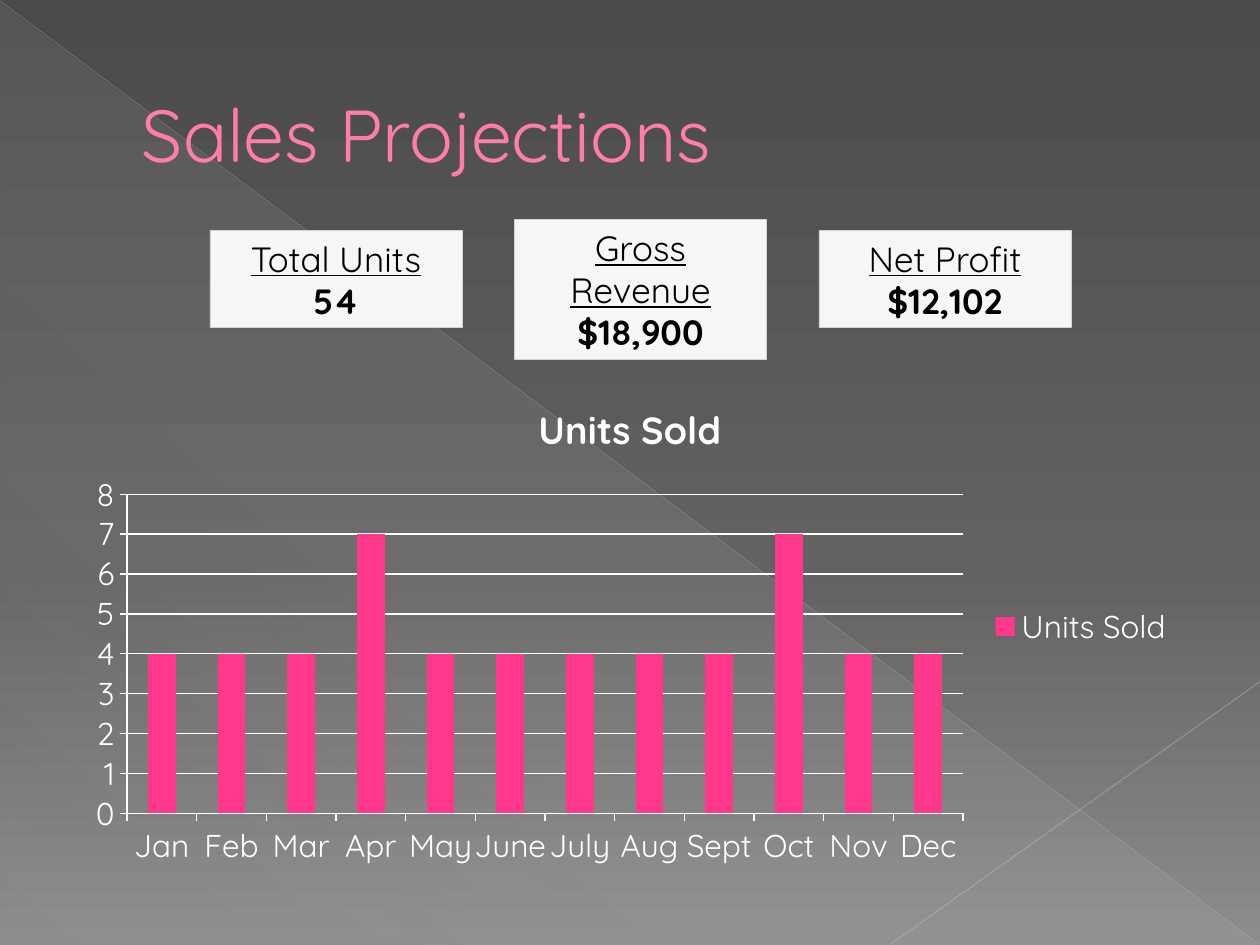
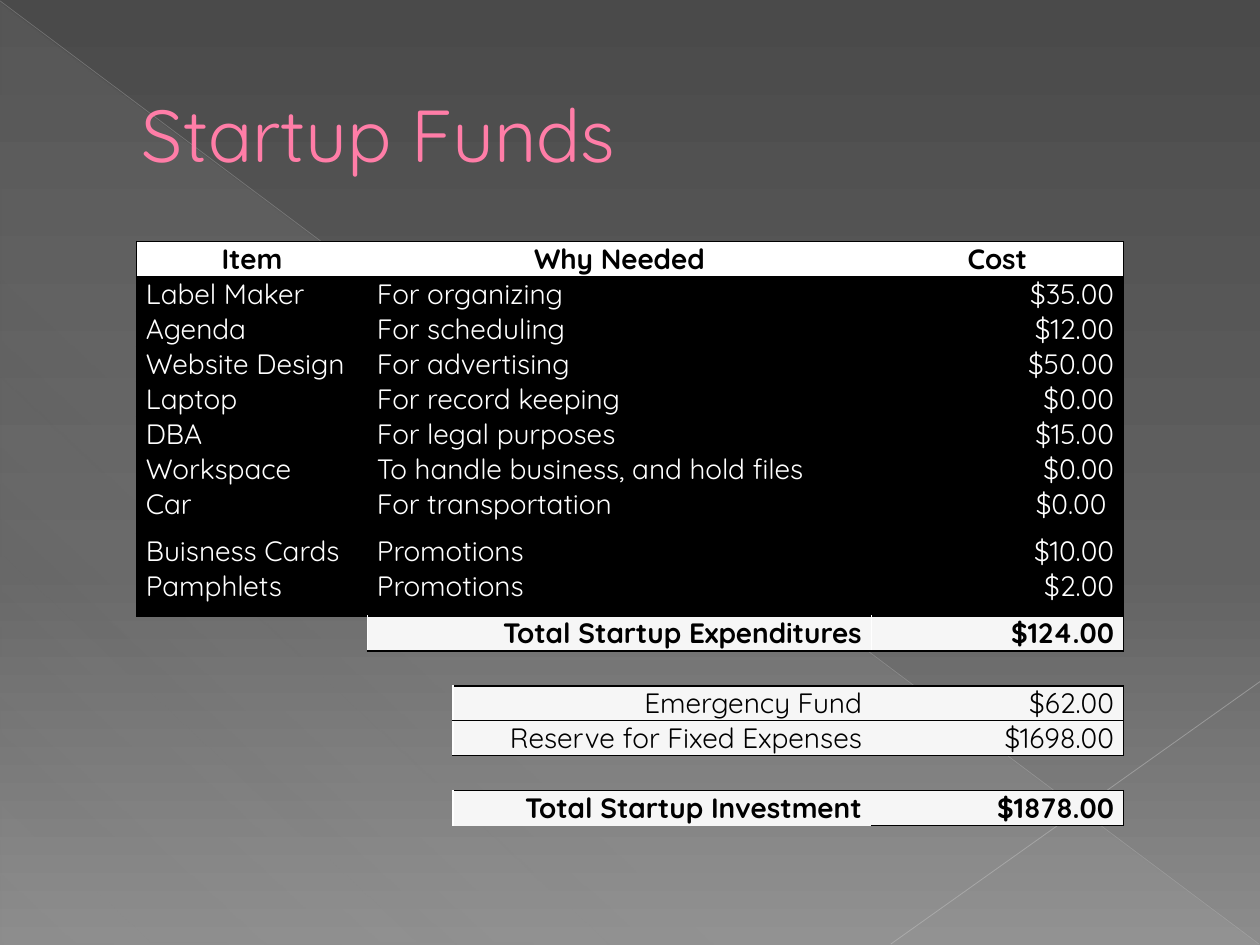
from lxml import etree
from pptx import Presentation
from pptx.chart.data import CategoryChartData
from pptx.dml.color import RGBColor
from pptx.enum.chart import XL_CHART_TYPE as ChartType, XL_LEGEND_POSITION as LegendPosition
from pptx.enum.chart import XL_TICK_MARK as TickMark
from pptx.enum.shapes import MSO_CONNECTOR as Connector, MSO_SHAPE as Shape
from pptx.enum.text import MSO_ANCHOR as Anchor, MSO_AUTO_SIZE as AutoSize, PP_ALIGN as Align
from pptx.oxml.ns import qn
from pptx.util import Pt

FONT = "Quicksand"
BLACK, WHITE, PALE, GREY = "000000", "FFFFFF", "F6F6F6", "D2D2D2"
PINK, TITLE_PINK, TITLE_EDGE = "FF388C", "FF7DA7", "B12761"
BACKDROP = [(0, "4A4A4A", 100), (60, "626262", 100), (100, "8C8C8C", 100)]
SHEEN = [(0, GREY, 10), (70, GREY, 8), (100, GREY, 1)]
NO_STYLE = "{2D5ABB26-0587-4C30-8999-92F81FD0307C}"

MONTHS = ["Jan", "Feb", "Mar", "Apr", "May", "June",
          "July", "Aug", "Sept", "Oct", "Nov", "Dec"]
UNITS = [4, 4, 4, 7, 4, 4, 4, 4, 4, 7, 4, 4]
TOTALS = [("Total Units", "54", 6.5, 55.5),
          ("Gross Revenue", "$18,900", 0, 80),
          ("Net Profit", "$12,102", 6.5, 55.5)]
EXPENSES = [
    ("Label Maker", "For organizing", "$35.00"),
    ("Agenda", "For scheduling", "$12.00"),
    ("Website Design", "For advertising", "$50.00"),
    ("Laptop", "For record keeping", "$0.00"),
    ("DBA", "For legal purposes", "$15.00"),
    ("Workspace\nCar", "To handle business, and hold files\nFor transportation",
     "$0.00\n$0.00 "),
    ("Buisness Cards\nPamphlets", "Promotions\nPromotions", "$10.00\n$2.00"),
]
SUMMARY = [
    ("Total Startup Expenditures", "$124.00", 1, True),
    None,
    ("Emergency Fund", "$62.00", 2, False),
    ("Reserve for Fixed Expenses", "$1698.00", 2, False),
    None,
    ("Total Startup Investment", "$1878.00", 2, True),
]


def rgb(color):
    return RGBColor.from_string(color)


def add_color(parent, color, alpha=100):
    solid = etree.SubElement(parent, qn("a:srgbClr"), val=color)
    if alpha < 100:
        etree.SubElement(solid, qn("a:alpha"), val=str(alpha * 1000))


def set_gradient(holder, stops, angle):
    gradient = etree.Element(qn("a:gradFill"), rotWithShape="1")
    stop_list = etree.SubElement(gradient, qn("a:gsLst"))
    for position, color, alpha in stops:
        stop = etree.SubElement(stop_list, qn("a:gs"), pos=str(position * 1000))
        add_color(stop, color, alpha)
    etree.SubElement(gradient, qn("a:lin"), ang=str(angle * 60000), scaled="0")
    holder.replace(holder.find(qn("a:solidFill")), gradient)


def style_text(frame, size, color, bold=False, align=Align.LEFT):
    for paragraph in frame.paragraphs:
        paragraph.alignment = align
        for run in paragraph.runs:
            run.font.name, run.font.size, run.font.bold = FONT, Pt(size), bold
            run.font.color.rgb = rgb(color)


def add_ray(slide, start, end, color, width, alpha):
    ray = slide.shapes.add_connector(Connector.STRAIGHT, *map(Pt, start + end))
    ray.line.color.rgb = rgb(color)
    ray.line.width = Pt(width)
    solid = ray.element.find(".//" + qn("a:ln") + "//" + qn("a:srgbClr"))
    etree.SubElement(solid, qn("a:alpha"), val=str(alpha * 1000))
    etree.SubElement(ray.element.spPr, qn("a:effectLst"))


def add_backdrop(slide):
    slide.background.fill.solid()
    set_gradient(slide.element.find(".//" + qn("p:bgPr")), BACKDROP, 90)
    sheen = slide.shapes.add_shape(Shape.RIGHT_TRIANGLE, Pt(0.5), Pt(1.5), Pt(719), Pt(538.5))
    sheen.shadow.inherit = False
    sheen.line.fill.background()
    sheen.fill.solid()
    set_gradient(sheen.element.spPr, SHEEN, 133)
    add_ray(slide, (0, 0.5), (719.5, 539.5), "BFBFBF", 0.39, 35)
    add_ray(slide, (720, 389.5), (509, 539.5), "C6C6C6", 0.47, 45)


def add_title(slide, text, left, top, width, height):
    title = slide.shapes.add_textbox(Pt(left), Pt(top), Pt(width), Pt(height))
    frame = title.text_frame
    frame.word_wrap = True
    frame.vertical_anchor = Anchor.MIDDLE
    frame.text = text
    style_text(frame, 42, TITLE_PINK)
    paragraph = frame.paragraphs[0]
    paragraph.alignment = Align.LEFT
    properties = paragraph.runs[0].font._element
    paragraph._p.get_or_add_pPr().set("marL", str(Pt(38)))
    outline = etree.Element(qn("a:ln"), w=str(Pt(0.5)))
    add_color(etree.SubElement(outline, qn("a:solidFill")), TITLE_EDGE)
    properties.insert(0, outline)


def start_slide(deck, title):
    slide = deck.slides.add_slide(deck.slide_layouts[6])
    add_backdrop(slide)
    add_title(slide, title, 36, 21, 648, 110)
    return slide


def add_totals(slide, left, top, width, step):
    for index, (label, value, offset, height) in enumerate(TOTALS):
        card = slide.shapes.add_shape(Shape.RECTANGLE, Pt(left + index * step),
                                      Pt(top + offset), Pt(width), Pt(height))
        card.shadow.inherit = False
        card.fill.solid()
        card.fill.fore_color.rgb = rgb(PALE)
        card.line.color.rgb = rgb(GREY)
        card.line.width = Pt(0.25)
        frame = card.text_frame
        frame.word_wrap = True
        frame.auto_size = AutoSize.SHAPE_TO_FIT_TEXT
        frame.vertical_anchor = Anchor.MIDDLE
        frame.text = f"{label}\n{value}"
        style_text(frame, 20, BLACK, align=Align.CENTER)
        frame.paragraphs[0].runs[0].font.underline = True
        frame.paragraphs[1].runs[0].font.bold = True


def add_units_chart(slide, left, top, width, height):
    data = CategoryChartData()
    data.categories = MONTHS
    data.add_series("Units Sold", UNITS)
    chart = slide.shapes.add_chart(ChartType.COLUMN_CLUSTERED, Pt(left), Pt(top),
                                   Pt(width), Pt(height), data).chart
    chart.font.name, chart.font.size = FONT, Pt(18)
    chart.font.color.rgb = rgb(WHITE)
    chart.has_title = True
    chart.chart_title.text_frame.text = "Units Sold"
    style_text(chart.chart_title.text_frame, 21.6, WHITE, True, Align.CENTER)
    chart.chart_title.include_in_layout = False
    chart.has_legend = True
    chart.legend.position = LegendPosition.RIGHT
    chart.legend.include_in_layout = False

    months, units = chart.category_axis, chart.value_axis
    units.minimum_scale, units.maximum_scale, units.major_unit = 0, 8, 1
    units.has_major_gridlines = True
    for axis in (months, units):
        axis.major_tick_mark = TickMark.OUTSIDE
    for line in (months.format.line, units.format.line, units.major_gridlines.format.line):
        line.color.rgb = rgb(WHITE)
        line.width = Pt(0.75)

    plot = chart.plots[0]
    plot.gap_width = 150
    plot.vary_by_categories = False
    bars = plot.series[0].format.fill
    bars.solid()
    bars.fore_color.rgb = rgb(PINK)


def fill_cell(cell, text="", fill=None, color=BLACK, bold=False, align=Align.LEFT, **edges):
    cell.margin_left = cell.margin_right = Pt(5.4)
    cell.margin_top = cell.margin_bottom = 0
    properties = cell._tc.get_or_add_tcPr()
    for side in "LRTB":
        if side in edges:
            edge = etree.SubElement(properties, qn(f"a:ln{side}"), w=str(Pt(1)))
            add_color(etree.SubElement(edge, qn("a:solidFill")), edges[side])
    if fill:
        cell.fill.solid()
        cell.fill.fore_color.rgb = rgb(fill)
    else:
        cell.fill.background()
    if text:
        cell.text_frame.text = text
        style_text(cell.text_frame, 16, color, bold, align)
    else:
        etree.SubElement(cell.text_frame.paragraphs[0]._p, qn("a:endParaRPr"), sz="1600")


def add_funds_table(slide, left, top):
    widths = [132, 49, 239, 144]
    heights = [20] * 6 + [47] * 2 + [20] * len(SUMMARY)
    frame = slide.shapes.add_table(len(heights), len(widths), Pt(left), Pt(top),
                                   Pt(sum(widths)), Pt(sum(heights)))
    table = frame.table
    frame.element.find(".//" + qn("a:tableStyleId")).text = NO_STYLE
    table.first_row = table.horz_banding = False
    for column, width in zip(table.columns, widths):
        column.width = Pt(width)
    for row, height in zip(table.rows, heights):
        row.height = Pt(height)

    for index, texts in enumerate([("Item", "Why Needed", "Cost")] + EXPENSES):
        header = index == 0
        table.cell(index, 1).merge(table.cell(index, 2))
        aligns = [Align.CENTER] * 3 if header else [Align.LEFT, Align.LEFT, Align.RIGHT]
        sides = [{"L": BLACK}, {}, {"R": BLACK}]
        for column, text, align, side in zip((0, 1, 3), texts, aligns, sides):
            fill_cell(table.cell(index, column), text, WHITE if header else BLACK,
                      BLACK if header else WHITE, header, align, T=BLACK, B=BLACK, **side)

    for index, entry in enumerate(SUMMARY, 1 + len(EXPENSES)):
        if entry is None:
            for column in range(4):
                fill_cell(table.cell(index, column))
            table.cell(index, 0).merge(table.cell(index, 2))
            continue
        label, cost, first, bold = entry
        for column in range(first):
            fill_cell(table.cell(index, column))
        if first == 1:
            table.cell(index, 1).merge(table.cell(index, 2))
        else:
            table.cell(index, 0).merge(table.cell(index, 1))
        fill_cell(table.cell(index, first), label, PALE, BLACK, bold, Align.RIGHT,
                  L=WHITE, T=BLACK)
        fill_cell(table.cell(index, 3), cost, PALE, BLACK, bold, Align.RIGHT,
                  R=BLACK, T=BLACK, B=BLACK)


def main():
    deck = Presentation()
    deck.slide_width, deck.slide_height = Pt(720), Pt(540)
    projections = start_slide(deck, "Sales Projections")
    add_units_chart(projections, 42, 216, 636, 284)
    add_totals(projections, 120, 125.25, 144, 174)
    funds = start_slide(deck, "Startup Funds")
    add_funds_table(funds, 78, 138)
    deck.save("out.pptx")


if __name__ == "__main__":
    main()
